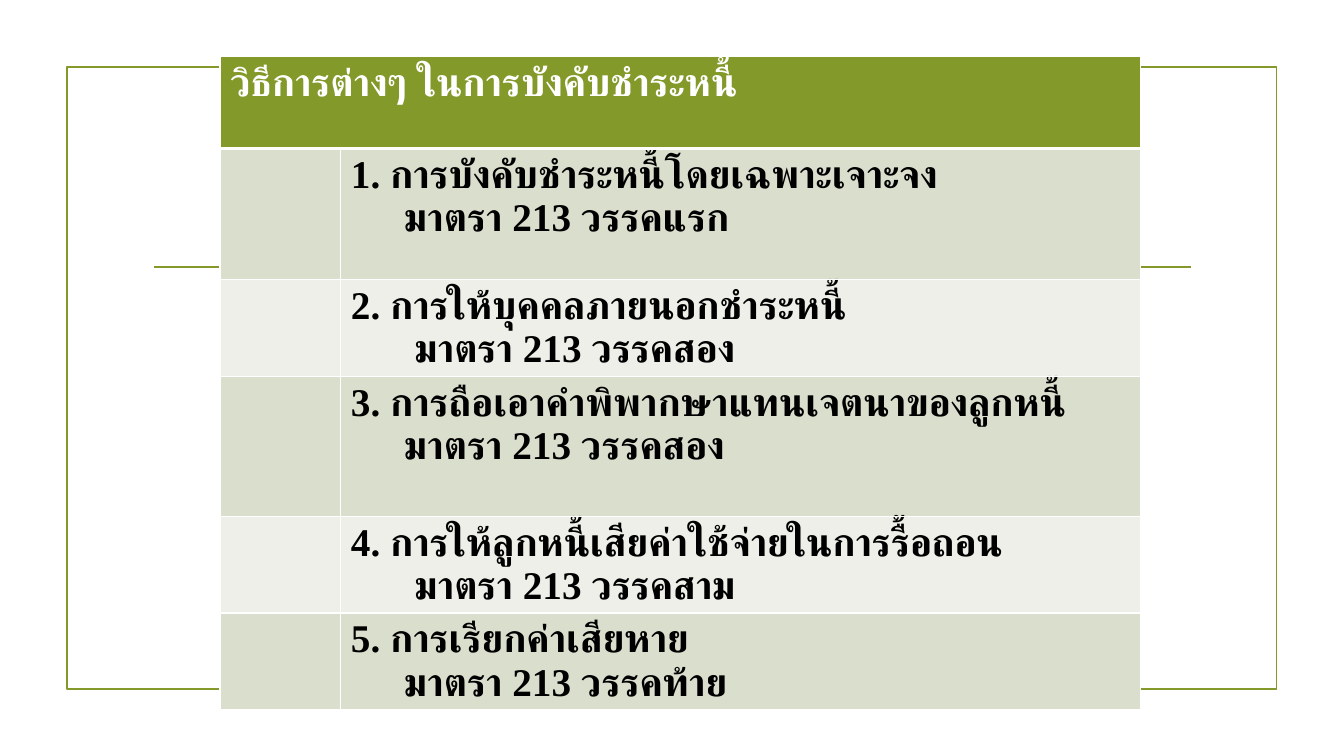
from lxml.etree import SubElement
from pptx import Presentation
from pptx.dml.color import RGBColor
from pptx.enum.shapes import MSO_CONNECTOR, MSO_SHAPE
from pptx.oxml import parse_xml
from pptx.oxml.ns import nsdecls, qn
from pptx.util import Pt

FONT = "Times New Roman"
GREEN, WHITE, BLACK = "83992A", "FFFFFF", "000000"
BANDS = ("D9DECD", "EDEFE8")
INDENTS = (38, 45.5)

HEADING = "วิธีการต่างๆ ในการบังคับชำระหนี้"
# method, section of the law, row height
METHODS = [
    ("1. การบังคับชำระหนี้โดยเฉพาะเจาะจง", "มาตรา 213 วรรคแรก", 93.5),
    ("2. การให้บุคคลภายนอกชำระหนี้", "มาตรา 213 วรรคสอง", 69),
    ("3. การถือเอาคำพิพากษาแทนเจตนาของลูกหนี้", "มาตรา 213 วรรคสอง", 100),
    ("4. การให้ลูกหนี้เสียค่าใช้จ่ายในการรื้อถอน", "มาตรา 213 วรรคสาม", 69),
    ("5. การเรียกค่าเสียหาย", "มาตรา 213 วรรคท้าย", 69),
]
HEADING_HEIGHT = 65.5
COLUMN_WIDTHS = (86.4, 571.4)


def color(value):
    return RGBColor.from_string(value)


def style_line(line):
    line.color.rgb = color(GREEN)
    line.width = Pt(1.25)


def style_cell(cell, fill, bottom=1):
    cell.fill.solid()
    cell.fill.fore_color.rgb = color(fill)
    properties = cell._tc.get_or_add_tcPr()
    borders = (("lnL", 1), ("lnR", 1), ("lnT", 1), ("lnB", bottom))
    for position, (side, width) in enumerate(borders):
        properties.insert(position, parse_xml(
            f'<a:{side} {nsdecls("a")} w="{Pt(width)}"><a:solidFill>'
            f'<a:srgbClr val="{WHITE}"/></a:solidFill></a:{side}>'))


def write_cell(cell, lines, text_color, indent=0):
    cell.text_frame.text = "\n".join(lines)
    for number, paragraph in enumerate(cell.text_frame.paragraphs):
        if number:
            paragraph._p.get_or_add_pPr().set("marL", str(Pt(indent)))
        for run in paragraph.runs:
            run.font.name = FONT
            run.font.size = Pt(28)
            run.font.bold = True
            run.font.color.rgb = color(text_color)
            SubElement(run._r.get_or_add_rPr(), qn("a:cs"), typeface=FONT)


presentation = Presentation()
presentation.slide_width, presentation.slide_height = Pt(960), Pt(540)
slide = presentation.slides.add_slide(presentation.slide_layouts[6])

# Frame and rule behind the table
frame = slide.shapes.add_shape(
    MSO_SHAPE.RECTANGLE, Pt(47.8), Pt(48), Pt(864), Pt(444))
frame.shadow.inherit = False
frame.fill.background()
style_line(frame.line)

rule = slide.shapes.add_connector(
    MSO_CONNECTOR.STRAIGHT, Pt(110), Pt(190.8), Pt(850.5), Pt(190.8))
style_line(rule.line)
SubElement(rule._element.spPr, qn("a:effectLst"))

# Table of enforcement methods
heights = [HEADING_HEIGHT] + [height for _, _, height in METHODS]
table = slide.shapes.add_table(
    len(heights), 2, Pt(157.1), Pt(40.5),
    Pt(sum(COLUMN_WIDTHS)), Pt(sum(heights))).table
for column, width in zip(table.columns, COLUMN_WIDTHS):
    column.width = Pt(width)
for row, height in zip(table.rows, heights):
    row.height = Pt(height)

heading = table.cell(0, 0)
heading.merge(table.cell(0, 1))
for cell in table.rows[0].cells:
    style_cell(cell, GREEN, bottom=3)
write_cell(heading, [HEADING], WHITE)

for index, (method, section, _) in enumerate(METHODS):
    for cell in table.rows[index + 1].cells:
        style_cell(cell, BANDS[index % 2])
    write_cell(table.cell(index + 1, 1), [method, section], BLACK, INDENTS[index % 2])

presentation.save("out.pptx")
